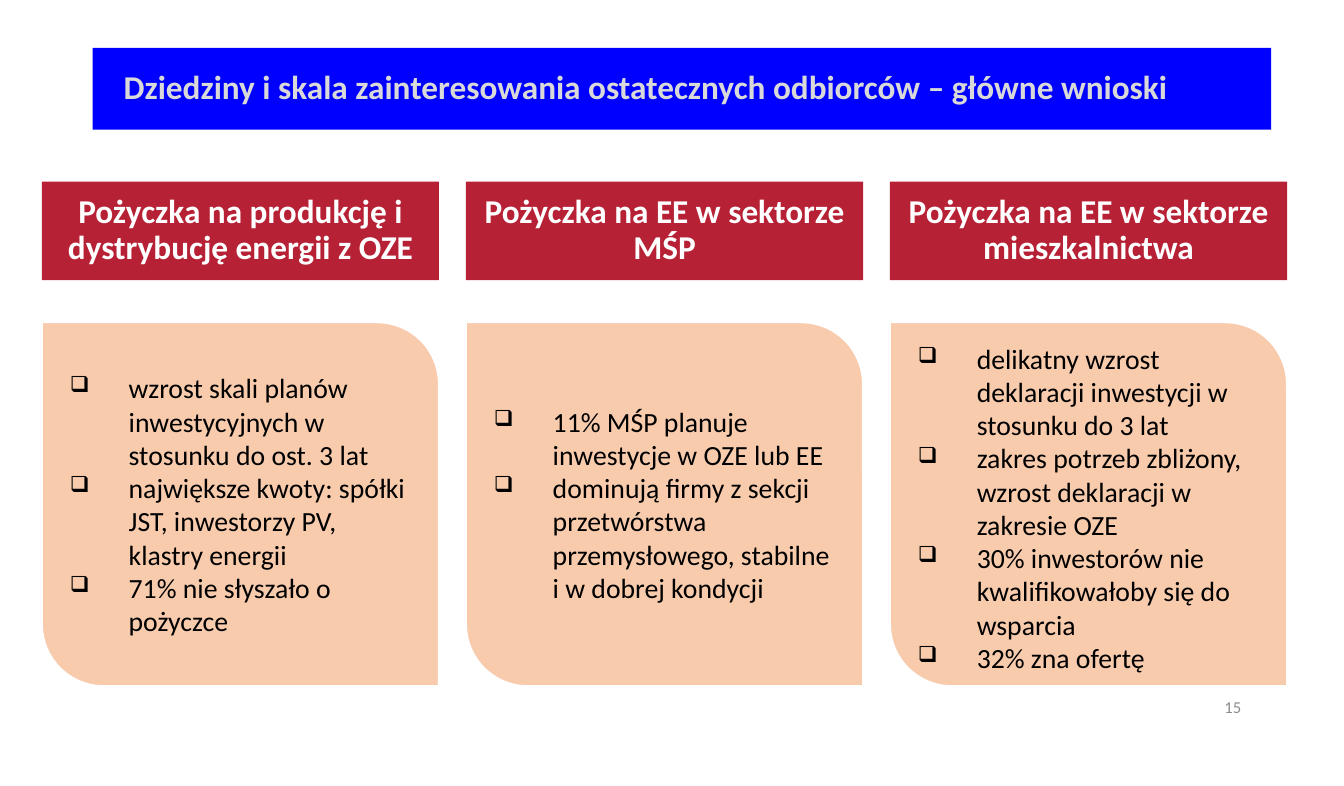
from dataclasses import dataclass

from lxml import etree
from pptx import Presentation
from pptx import util as u
from pptx.dml.color import RGBColor
from pptx.enum import shapes, text
from pptx.oxml import ns
from pptx.shapes.autoshape import Shape
from pptx.slide import Slide

BLUE = RGBColor(0x00, 0x00, 0xFF)
CRIMSON = RGBColor(0xB7, 0x21, 0x35)
PEACH = RGBColor(0xF8, 0xCB, 0xAD)
WHITE = RGBColor(0xFF, 0xFF, 0xFF)
BLACK = RGBColor(0x00, 0x00, 0x00)
SILVER = RGBColor(0xD9, 0xD9, 0xD9)
GREY = RGBColor(0x8C, 0x8C, 0x8C)

FONT = "Calibri"
SLIDE_WIDTH = u.Inches(13.47)
SLIDE_HEIGHT = u.Inches(7.88)

COLUMN_LEFT = 3.12
COLUMN_PITCH = 31.55
COLUMN_WIDTH = 29.55
BULLET_INDENT = u.Inches(0.59)
CORNER = 0.17


@dataclass(frozen=True)
class Area:
    """Position and size in percent of the slide."""

    left: float
    top: float
    width: float
    height: float

    def lengths(self) -> tuple[int, int, int, int]:
        return (
            int(SLIDE_WIDTH * self.left / 100),
            int(SLIDE_HEIGHT * self.top / 100),
            int(SLIDE_WIDTH * self.width / 100),
            int(SLIDE_HEIGHT * self.height / 100),
        )


@dataclass(frozen=True)
class TextStyle:
    size: int
    color: RGBColor
    bold: bool = False
    align: text.PP_ALIGN = text.PP_ALIGN.LEFT
    line_spacing: float = 1.0


@dataclass(frozen=True)
class LoanColumn:
    heading: str
    findings: tuple[str, ...]
    top_inset: float = 0.05


BANNER_AREA = Area(6.9, 6.09, 87.68, 10.41)
NUMBER_AREA = Area(70.6, 87.31, 22.49, 5.33)

BANNER_STYLE = TextStyle(24, SILVER, bold=True, line_spacing=0.9)
HEADING_STYLE = TextStyle(24, WHITE, True, text.PP_ALIGN.CENTER, 0.9)
FINDING_STYLE = TextStyle(20, BLACK)
NUMBER_STYLE = TextStyle(12, GREY, align=text.PP_ALIGN.RIGHT)

LOAN_COLUMNS = (
    LoanColumn(
        "Pożyczka na produkcję i dystrybucję energii z OZE",
        (
            "wzrost skali planów inwestycyjnych w stosunku do ost. 3 lat",
            "największe kwoty: spółki JST, inwestorzy PV, klastry energii",
            "71% nie słyszało o pożyczce",
        ),
    ),
    LoanColumn(
        "Pożyczka na EE w sektorze MŚP",
        (
            "11% MŚP planuje inwestycje w OZE lub EE",
            "dominują firmy z sekcji przetwórstwa przemysłowego, stabilne i w dobrej kondycji",
        ),
    ),
    LoanColumn(
        "Pożyczka na EE w sektorze mieszkalnictwa",
        (
            "delikatny wzrost deklaracji inwestycji w stosunku do 3 lat",
            "zakres potrzeb zbliżony, wzrost deklaracji w zakresie OZE",
            "30% inwestorów nie kwalifikowałoby się do wsparcia",
            "32% zna ofertę",
        ),
        top_inset=0.12,
    ),
)


def set_indent(paragraph, margin: int, first_line: int) -> None:
    properties = paragraph._p.get_or_add_pPr()
    properties.set("marL", str(margin))
    properties.set("indent", str(first_line))


def add_bullet(paragraph) -> None:
    set_indent(paragraph, BULLET_INDENT, -BULLET_INDENT)
    properties = paragraph._p.get_or_add_pPr()
    etree.SubElement(properties, ns.qn("a:buSzPct")).set("val", "80000")
    etree.SubElement(properties, ns.qn("a:buChar")).set("char", "❑")


def write(box: Shape, lines: tuple[str, ...], style: TextStyle, bulleted: bool = False) -> None:
    frame = box.text_frame
    frame.text = "\n".join(lines)
    frame.word_wrap = True
    frame.auto_size = text.MSO_AUTO_SIZE.NONE
    frame.vertical_anchor = text.MSO_ANCHOR.MIDDLE
    for paragraph in frame.paragraphs:
        if bulleted:
            add_bullet(paragraph)
        paragraph.alignment = style.align
        paragraph.line_spacing = style.line_spacing
        for span in paragraph.runs:
            span.font.name = FONT
            span.font.size = u.Pt(style.size)
            span.font.bold = style.bold
            span.font.color.rgb = style.color


def add_panel(page: Slide, kind: shapes.MSO_SHAPE, area: Area, fill: RGBColor) -> Shape:
    panel = page.shapes.add_shape(kind, *area.lengths())
    panel.shadow.inherit = False
    panel.fill.solid()
    panel.fill.fore_color.rgb = fill
    panel.line.fill.background()
    return panel


def add_banner(page: Slide) -> None:
    banner = page.shapes.title
    banner.left, banner.top, banner.width, banner.height = BANNER_AREA.lengths()
    banner.fill.solid()
    banner.fill.fore_color.rgb = BLUE
    title = "Dziedziny i skala zainteresowania ostatecznych odbiorców – główne wnioski"
    write(banner, (title,), BANNER_STYLE)
    set_indent(banner.text_frame.paragraphs[0], u.Inches(0.2), u.Inches(0.01))


def add_loan_column(page: Slide, index: int, column: LoanColumn) -> None:
    left = COLUMN_LEFT + index * COLUMN_PITCH
    heading_area = Area(left, 23.1, COLUMN_WIDTH, 12.56)
    heading = add_panel(page, shapes.MSO_SHAPE.RECTANGLE, heading_area, CRIMSON)
    write(heading, (column.heading,), HEADING_STYLE)

    card_area = Area(left, 40.99, COLUMN_WIDTH, 46.32)
    card = add_panel(page, shapes.MSO_SHAPE.ROUND_2_DIAG_RECTANGLE, card_area, PEACH)
    card.adjustments[0] = 0
    card.adjustments[1] = CORNER
    card.line.color.rgb = WHITE
    card.line.width = u.Pt(1.5)
    card.text_frame.margin_top = u.Inches(column.top_inset)
    write(card, column.findings, FINDING_STYLE, bulleted=True)


def main() -> None:
    deck = Presentation()
    deck.slide_width = SLIDE_WIDTH
    deck.slide_height = SLIDE_HEIGHT
    page = deck.slides.add_slide(deck.slide_layouts.get_by_name("Title Only"))
    add_banner(page)
    for index, column in enumerate(LOAN_COLUMNS):
        add_loan_column(page, index, column)
    number = page.shapes.add_textbox(*NUMBER_AREA.lengths())
    write(number, ("15",), NUMBER_STYLE)
    deck.save("out.pptx")


if __name__ == "__main__":
    main()
